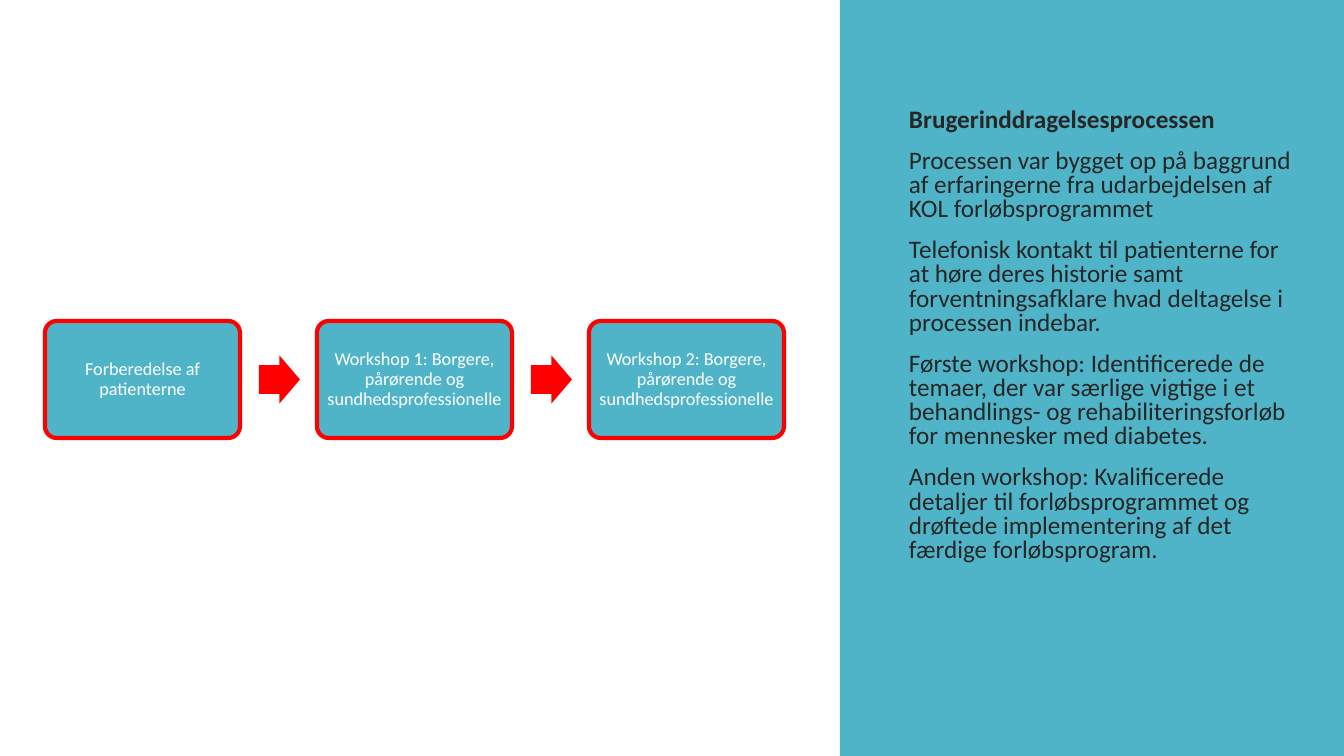
import pptx
import pptx.dml.color
import pptx.enum.shapes
import pptx.enum.text
import pptx.util

RGBColor = pptx.dml.color.RGBColor
Shape = pptx.enum.shapes.MSO_SHAPE

TEAL = RGBColor(0x50, 0xB4, 0xC8)
RED = RGBColor(0xFF, 0x00, 0x00)
WHITE = RGBColor(0xFF, 0xFF, 0xFF)
DARK = RGBColor(0x26, 0x26, 0x26)

FONT = "Calibri"
PAGE_WIDTH, PAGE_HEIGHT = 1344, 756
EMU_PER_PX = 12192000 / PAGE_WIDTH

HEADING = "Brugerinddragelsesprocessen"
BODY = [
    "Processen var bygget op på baggrund af erfaringerne fra udarbejdelsen af KOL forløbsprogrammet",
    "Telefonisk kontakt til patienterne for at høre deres historie samt forventningsafklare "
    "hvad deltagelse i processen indebar.",
    "Første workshop: Identificerede de temaer, der var særlige vigtige i et behandlings- og "
    "rehabiliteringsforløb for mennesker med diabetes.",
    "Anden workshop: Kvalificerede detaljer til forløbsprogrammet og drøftede implementering "
    "af det færdige forløbsprogram.",
]
STEPS = [
    "Forberedelse af patienterne",
    "Workshop 1: Borgere, pårørende og sundhedsprofessionelle",
    "Workshop 2: Borgere, pårørende og sundhedsprofessionelle",
]


def px(length):
    return pptx.util.Emu(round(length * EMU_PER_PX))


def add_filled_shape(page, kind, box, fill, adjustments=()):
    shape = page.shapes.add_shape(kind, *map(px, box))
    shape.shadow.inherit = False
    shape.fill.solid()
    shape.fill.fore_color.rgb = fill
    shape.line.fill.background()
    for index, value in enumerate(adjustments):
        shape.adjustments[index] = value
    return shape


def add_span(para, text, size, color, bold=False):
    span = para.add_run()
    span.text = text
    span.font.name = FONT
    span.font.size = pptx.util.Pt(size)
    span.font.bold = bold
    span.font.color.rgb = color


def add_step(page, box, text):
    step = add_filled_shape(page, Shape.ROUNDED_RECTANGLE, box, TEAL, [0.1])
    step.line.color.rgb = RED
    step.line.width = pptx.util.Pt(3)
    frame = step.text_frame
    frame.word_wrap = True
    frame.vertical_anchor = pptx.enum.text.MSO_ANCHOR.MIDDLE
    frame.margin_left = frame.margin_right = px(5)
    frame.margin_top = frame.margin_bottom = px(5)
    para = frame.paragraphs[0]
    para.alignment = pptx.enum.text.PP_ALIGN.CENTER
    para.line_spacing = 0.9
    add_span(para, text, 13, WHITE)


def add_process(page, box):
    """Place the steps at equal gaps across the box, with an arrow in each gap."""
    left, top, width, height = box
    step_width, arrow_width, arrow_height = 195, 41, 48
    pitch = (width - step_width) / (len(STEPS) - 1)
    for index, text in enumerate(STEPS):
        step_left = left + index * pitch
        if index:
            arrow_box = (step_left - 58, top + (height - arrow_height) / 2,
                         arrow_width, arrow_height)
            add_filled_shape(page, Shape.RIGHT_ARROW, arrow_box, RED, [0.6, 0.5])
        add_step(page, (step_left, top, step_width, height), text)


def add_side_panel(page, box):
    left, top, width, height = box
    add_filled_shape(page, Shape.RECTANGLE, box, TEAL)
    text_box = page.shapes.add_textbox(
        px(left + 59), px(top + 81), px(width - 93), px(height - 95))
    frame = text_box.text_frame
    frame.word_wrap = True
    frame.margin_left = frame.margin_right = px(10)
    frame.margin_top = px(28)
    for index, text in enumerate([HEADING, *BODY]):
        para = frame.add_paragraph() if index else frame.paragraphs[0]
        para.line_spacing = 0.8
        para.space_before = pptx.util.Pt(12 if index else 0)
        add_span(para, text, 18, DARK, bold=index == 0)


def main():
    deck = pptx.Presentation()
    deck.slide_width, deck.slide_height = px(PAGE_WIDTH), px(PAGE_HEIGHT)
    page = deck.slides.add_slide(deck.slide_layouts[6])
    add_side_panel(page, (840, 0, 504, PAGE_HEIGHT))
    add_process(page, (45, 321, 739, 117))
    deck.save("out.pptx")


if __name__ == "__main__":
    main()
